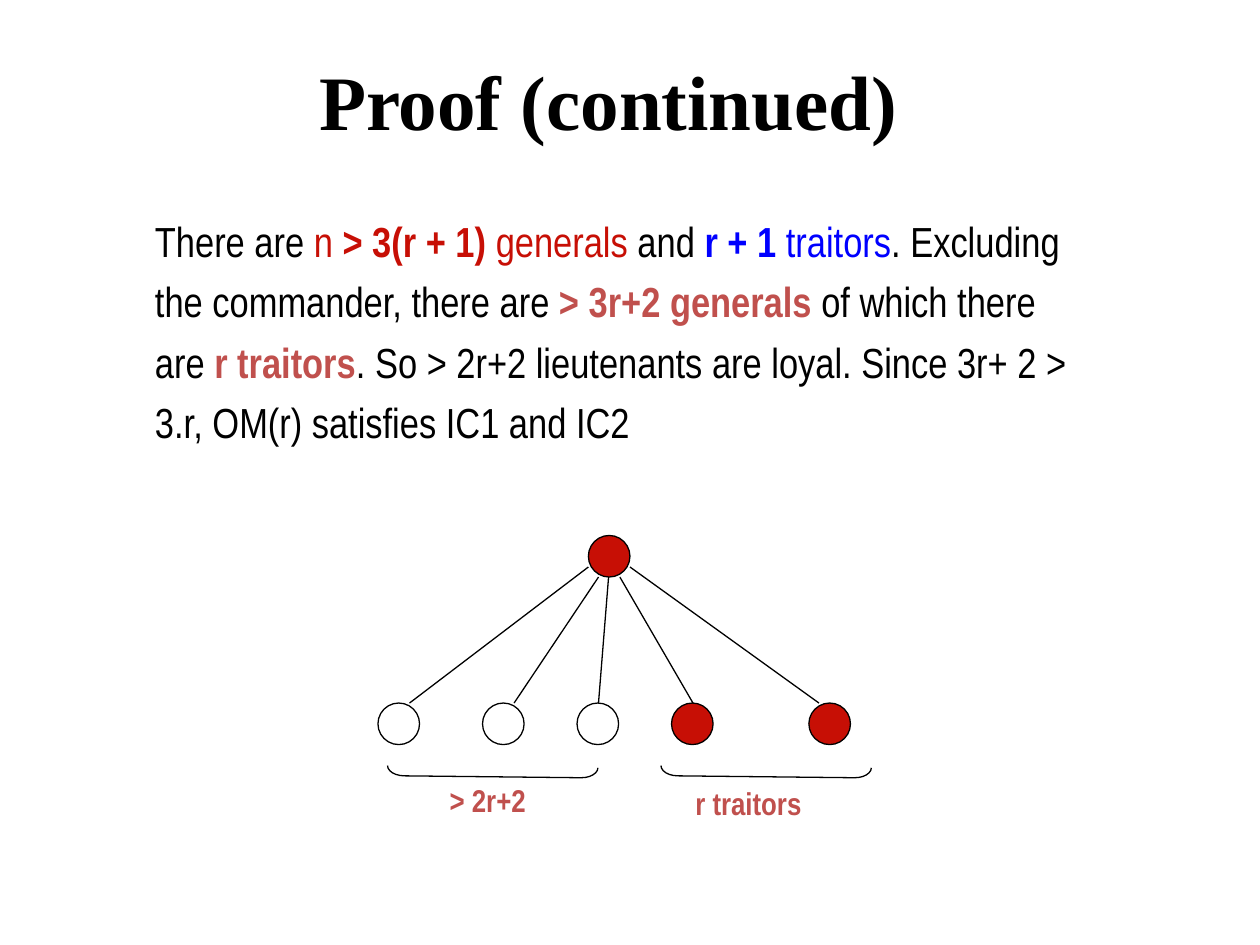
from dataclasses import dataclass

from lxml import etree
from pptx import Presentation
from pptx.dml.color import RGBColor
from pptx.enum import shapes, text
from pptx.oxml import ns
from pptx.util import Inches, Pt


@dataclass(frozen=True)
class Theme:
    black: RGBColor = RGBColor(0x00, 0x00, 0x00)
    red: RGBColor = RGBColor(0xC7, 0x0F, 0x05)
    blue: RGBColor = RGBColor(0x00, 0x00, 0xFF)
    accent: RGBColor = RGBColor(0xC0, 0x50, 0x4D)
    title_font: str = "Times New Roman"
    body_font: str = "Arial Narrow"
    title_size: int = 44
    body_size: int = 24
    label_size: int = 18
    line_width: float = 0.75


THEME = Theme()
NODE_SIZE = 0.33
COMMANDER = (4.67, 4.25)
LIEUTENANT_TOP = 5.58
# left edge of the node, is a traitor, start of its line, x where the line ends
LIEUTENANTS = [
    (3.00, False, (4.67, 4.50), 3.25),
    (3.83, False, (4.75, 4.58), 4.08),
    (4.58, False, (4.83, 4.58), 4.75),
    (5.33, True, (4.92, 4.58), 5.50),
    (6.42, True, (5.00, 4.50), 6.50),
]
# left edge of the bracket, label, left and top of the label, its width
GROUPS = [
    (3.87, "> 2r+2", 3.47, 6.15, 1.01),
    (6.04, "r traitors", 5.42, 6.17, 1.32),
]
PROOF = [
    ("There are ", THEME.black, False),
    ("n ", THEME.red, False),
    ("> 3(r + 1)", THEME.red, True),
    (" generals", THEME.red, False),
    (" and ", THEME.black, False),
    ("r + 1", THEME.blue, True),
    (" traitors", THEME.blue, False),
    (". Excluding the commander, there are ", THEME.black, False),
    ("> 3r+2 generals", THEME.accent, True),
    (" of which there are ", THEME.black, False),
    ("r traitors", THEME.accent, True),
    (". So > 2r+2 lieutenants are loyal. Since 3r+ 2 > 3.r, "
     "OM(r) satisfies IC1 and IC2", THEME.black, False),
]


def format_span(span, font, size, color, bold):
    span.font.name = font
    span.font.size = Pt(size)
    span.font.color.rgb = color
    span.font.bold = bold


def set_title(page, words):
    title = page.shapes.title
    title.left, title.top = Inches(0.58), Inches(0.17)
    title.width, title.height = Inches(8.5), Inches(1.25)
    frame = title.text_frame
    frame.text = words
    frame.vertical_anchor = text.MSO_ANCHOR.MIDDLE
    para = frame.paragraphs[0]
    para.alignment = text.PP_ALIGN.CENTER
    format_span(para.runs[0], THEME.title_font, THEME.title_size, THEME.black, True)


def add_text(page, left, top, width, height, spans, size):
    """Add one paragraph of (words, colour, bold) spans and return its box."""
    box = page.shapes.add_textbox(
        Inches(left), Inches(top), Inches(width), Inches(height))
    box.text_frame.word_wrap = True
    para = box.text_frame.paragraphs[0]
    for words, color, bold in spans:
        span = para.add_run()
        span.text = words
        format_span(span, THEME.body_font, size, color, bold)
    return box


def add_proof(page):
    frame = add_text(page, 0.75, 1.58, 7.92, 2.25, PROOF, THEME.body_size).text_frame
    frame.margin_left = Inches(0.48)
    frame.paragraphs[0].line_spacing = 1.2


def set_outline(line):
    line.color.rgb = THEME.black
    line.width = Pt(THEME.line_width)


def add_outlined_shape(page, kind, left, top, width, height):
    shape = page.shapes.add_shape(
        kind, Inches(left), Inches(top), Inches(width), Inches(height))
    shape.shadow.inherit = False
    shape.fill.background()
    set_outline(shape.line)
    return shape


def add_general(page, left, top, traitor):
    node = add_outlined_shape(
        page, shapes.MSO_SHAPE.OVAL, left, top, NODE_SIZE, NODE_SIZE)
    if traitor:
        node.fill.solid()
        node.fill.fore_color.rgb = THEME.red


def add_order(page, start, end):
    """Draw the line from the commander to a lieutenant."""
    line = page.shapes.add_connector(
        shapes.MSO_CONNECTOR.STRAIGHT, *(Inches(value) for value in start + end))
    set_outline(line.line)
    etree.SubElement(line._element.spPr, ns.qn("a:effectLst"))


def add_group(page, bracket_left, label, left, top, width):
    bracket = add_outlined_shape(
        page, shapes.MSO_SHAPE.RIGHT_BRACKET, bracket_left, 5.29, 0.08, 1.67)
    bracket.rotation = 90.6
    bracket.adjustments[0] = 1.67
    add_text(page, left, top, width, 0.5,
             [(label, THEME.accent, True)], THEME.label_size)


def main():
    deck = Presentation()
    deck.slide_width, deck.slide_height = Inches(10), Inches(7.5)
    page = deck.slides.add_slide(deck.slide_layouts.get_by_name("Title Only"))
    set_title(page, "Proof (continued)")
    add_proof(page)
    add_general(page, *COMMANDER, traitor=True)
    for left, traitor, start, end_x in LIEUTENANTS:
        add_general(page, left, LIEUTENANT_TOP, traitor)
        add_order(page, start, (end_x, LIEUTENANT_TOP))
    for group in GROUPS:
        add_group(page, *group)
    deck.save("out.pptx")


if __name__ == "__main__":
    main()
